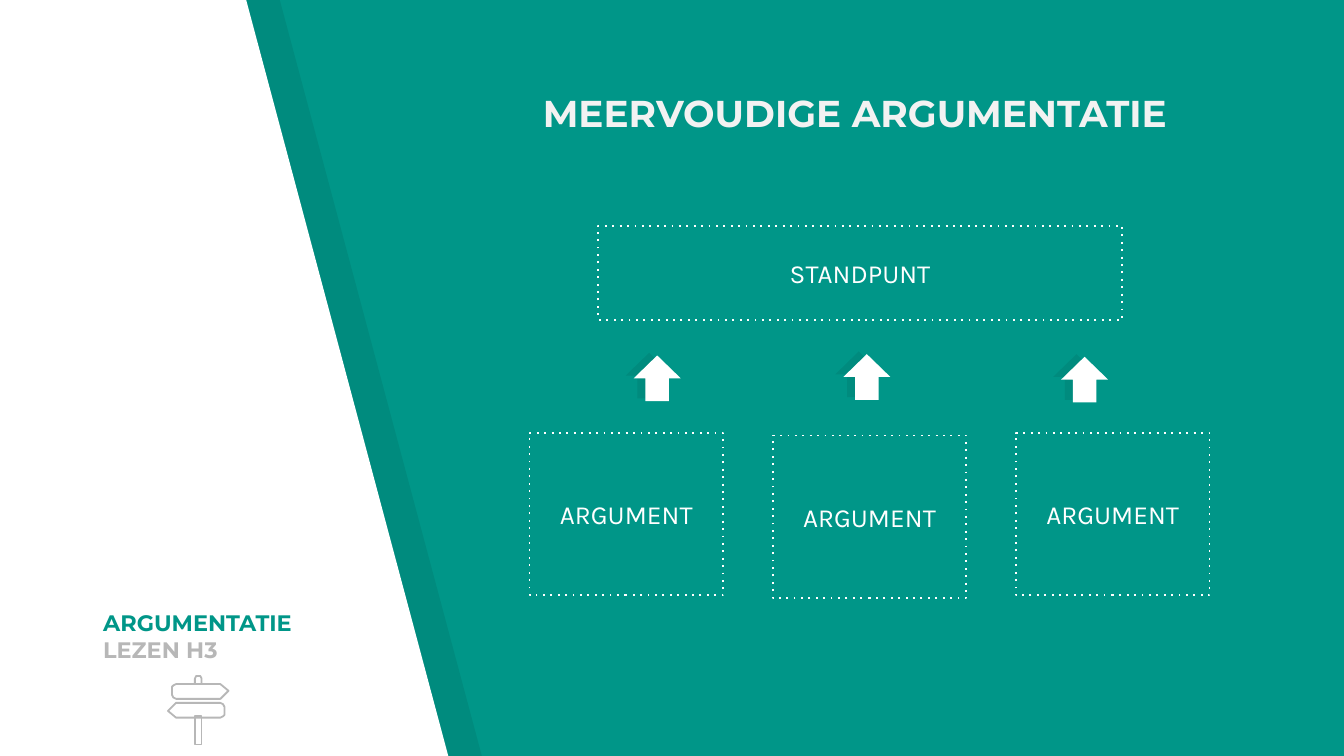
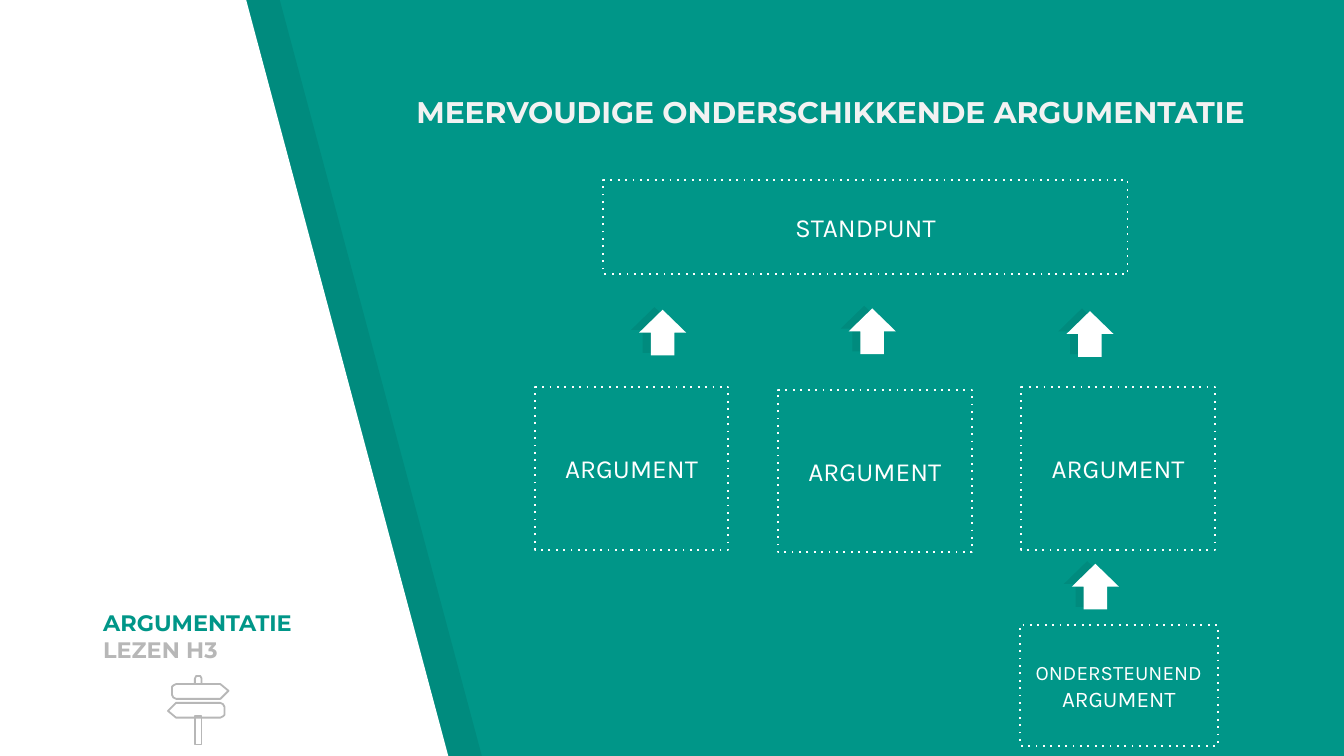
from lxml import etree
from pptx import Presentation
from pptx.dml.color import RGBColor
from pptx.enum.dml import MSO_LINE
from pptx.enum.shapes import MSO_SHAPE
from pptx.enum.text import MSO_ANCHOR, PP_ALIGN
from pptx.oxml.ns import qn
from pptx.util import Inches, Pt

RECT, ARROW = MSO_SHAPE.RECTANGLE, MSO_SHAPE.RIGHT_ARROW
TOP, MIDDLE, BOTTOM = MSO_ANCHOR.TOP, MSO_ANCHOR.MIDDLE, MSO_ANCHOR.BOTTOM
LEFT, CENTER = PP_ALIGN.LEFT, PP_ALIGN.CENTER

WIDTH = 10
HEIGHT = WIDTH * 9 / 16
TEAL, WHITE, BLACK, GREY, PALE = "009688", "FFFFFF", "000000", "B7B7B7", "F2F2F2"
HEAD = {"name": "Montserrat", "bold": True}
BODY = {"name": "Karla", "bold": False}

LABEL = [("ARGUMENTATIE ", 12, TEAL), ("LEZEN H3", 12, GREY)]
CLAIM = [("STANDPUNT", 14, WHITE)]
ARGUMENT = [("ARGUMENT", 14, WHITE)]
SUPPORT = [("ONDERSTEUNEND", 11, WHITE), (" ARGUMENT", 12, WHITE)]

SLIDES = [
    {"title": "MEERVOUDIGE ARGUMENTATIE", "size": 20,
     "title_at": (3.94, 0.62, 5.81, 0.44), "origin": (3.94, 1.68), "support": False},
    {"title": "MEERVOUDIGE ONDERSCHIKKENDE ARGUMENTATIE", "size": 16,
     "title_at": (3, 0.65, 8.17, 0.37), "origin": (3.98, 1.34), "support": True},
]

# Diagram, measured from its origin
CLAIM_AT = (0.51, 0, 3.9, 0.7)
ARGUMENT_SIZE = (1.44, 1.21)
ARGUMENT_STEP = 1.81
ARGUMENT_TOPS = (1.54, 1.56, 1.54)
ARROWS = [(0.78, 0.96), (2.34, 0.95), (3.96, 0.97)]
SUPPORT_AT = (3.61, 3.31, 1.47, 0.9)
SUPPORT_ARROW = (4, 2.85)
ARROW_SIZE = (0.34, 0.35)
SHADOW_SHIFT = (0.06, 0.02)

# Left panel and its shadow band
PANEL = [(-0.02, -0.01), (-0.02, 5.64), (3.34, 5.64), (1.83, -0.01)]
BAND_SHIFT = 0.25

# Signpost; the lower board is the upper one turned half a turn
BOARD = [(1.64, 5.09), (1.31, 5.09), (1.29, 5.1), (1.28, 5.11), (1.28, 5.17),
         (1.29, 5.19), (1.31, 5.2), (1.64, 5.2), (1.7, 5.14)]
TURN = (2.95, 10.43)
CAP = [(1.5, 5.09), (1.5, 5.05), (1.49, 5.03), (1.46, 5.03), (1.45, 5.05), (1.45, 5.09)]
POLE = [(1.45, 5.33), (1.45, 5.54), (1.5, 5.54), (1.5, 5.33)]
SIGNPOST = [BOARD, [(TURN[0] - x, TURN[1] - y) for x, y in BOARD], CAP, POLE]


def rgb(value):
    return RGBColor.from_string(value)


def paint(sp, fill=None, alpha=None, line=None, weight=1, dotted=False):
    sp.shadow.inherit = False
    if fill:
        sp.fill.solid()
        sp.fill.fore_color.rgb = rgb(fill)
        if alpha:
            color = sp.fill._xPr.find(".//" + qn("a:srgbClr"))
            etree.SubElement(color, qn("a:alpha")).set("val", str(alpha * 1000))
    else:
        sp.fill.background()
    if line:
        sp.line.color.rgb = rgb(line)
        sp.line.width = Pt(weight)
        if dotted:
            sp.line.dash_style = MSO_LINE.ROUND_DOT
            sp._element.spPr.find(".//" + qn("a:prstDash")).set("val", "dot")
    else:
        sp.line.fill.background()


def write(sp, runs, font, align, anchor, inset=0.1):
    tf = sp.text_frame
    frame = {"word_wrap": True, "vertical_anchor": anchor,
             "margin_left": Inches(0.1), "margin_right": Inches(0.1),
             "margin_top": Inches(inset), "margin_bottom": Inches(inset)}
    for key, value in frame.items():
        setattr(tf, key, value)
    p = tf.paragraphs[0]
    p.alignment = align
    for text, size, color in runs:
        r = p.add_run()
        r.text = text
        for key, value in {**font, "size": Pt(size)}.items():
            setattr(r.font, key, value)
        r.font.color.rgb = rgb(color)


def add_outline(shapes, points, **look):
    emu = [(Inches(x), Inches(y)) for x, y in points]
    builder = shapes.build_freeform(*emu[0])
    builder.add_line_segments(emu[1:], close=True)
    paint(builder.convert_to_shape(), **look)


def add_text(slide, at, *text):
    write(slide.shapes.add_textbox(*map(Inches, at)), *text)


def add_box(slide, at, runs):
    sp = slide.shapes.add_shape(RECT, *map(Inches, at))
    paint(sp, line=WHITE, dotted=True)
    write(sp, runs, BODY, CENTER, MIDDLE)


def add_up_arrow(slide, x, y):
    """White arrow over a faint shadow arrow, grouped."""
    group = slide.shapes.add_group_shape()
    dx, dy = SHADOW_SHIFT
    for left, top, look in [(x - dx, y - dy, {"fill": BLACK, "alpha": 7}),
                            (x, y, {"fill": WHITE})]:
        sp = group.shapes.add_shape(ARROW, *map(Inches, (left, top, *ARROW_SIZE)))
        sp.rotation = 270
        paint(sp, **look)


def add_frame(slide):
    """Background, left panel, chapter label and signpost."""
    slide.background.fill.solid()
    slide.background.fill.fore_color.rgb = rgb(TEAL)
    band = [(x + BAND_SHIFT, y) for x, y in PANEL]
    add_outline(slide.shapes, band, fill=BLACK, alpha=7)
    add_outline(slide.shapes, PANEL, fill=WHITE)
    add_text(slide, (0.67, 4.5, 1.76, 0.53), LABEL, HEAD, LEFT, BOTTOM)
    group = slide.shapes.add_group_shape()
    for points in SIGNPOST:
        add_outline(group.shapes, points, line=GREY, weight=0.96)


def add_diagram(slide, origin, support):
    ox, oy = origin

    def place(x, y, *size):
        return (ox + x, oy + y, *size)

    add_box(slide, place(*CLAIM_AT), CLAIM)
    for i, top in enumerate(ARGUMENT_TOPS):
        add_box(slide, place(i * ARGUMENT_STEP, top, *ARGUMENT_SIZE), ARGUMENT)
    for arrow in ARROWS:
        add_up_arrow(slide, *place(*arrow))
    if support:
        add_box(slide, place(*SUPPORT_AT), SUPPORT)
        add_up_arrow(slide, *place(*SUPPORT_ARROW))


def main():
    prs = Presentation()
    prs.slide_width, prs.slide_height = Inches(WIDTH), Inches(HEIGHT)
    for content in SLIDES:
        slide = prs.slides.add_slide(prs.slide_layouts[6])
        add_frame(slide)
        title = [(content["title"], content["size"], PALE)]
        add_text(slide, content["title_at"], title, HEAD, LEFT, TOP, 0.05)
        add_diagram(slide, content["origin"], content["support"])
    prs.save("out.pptx")


if __name__ == "__main__":
    main()
